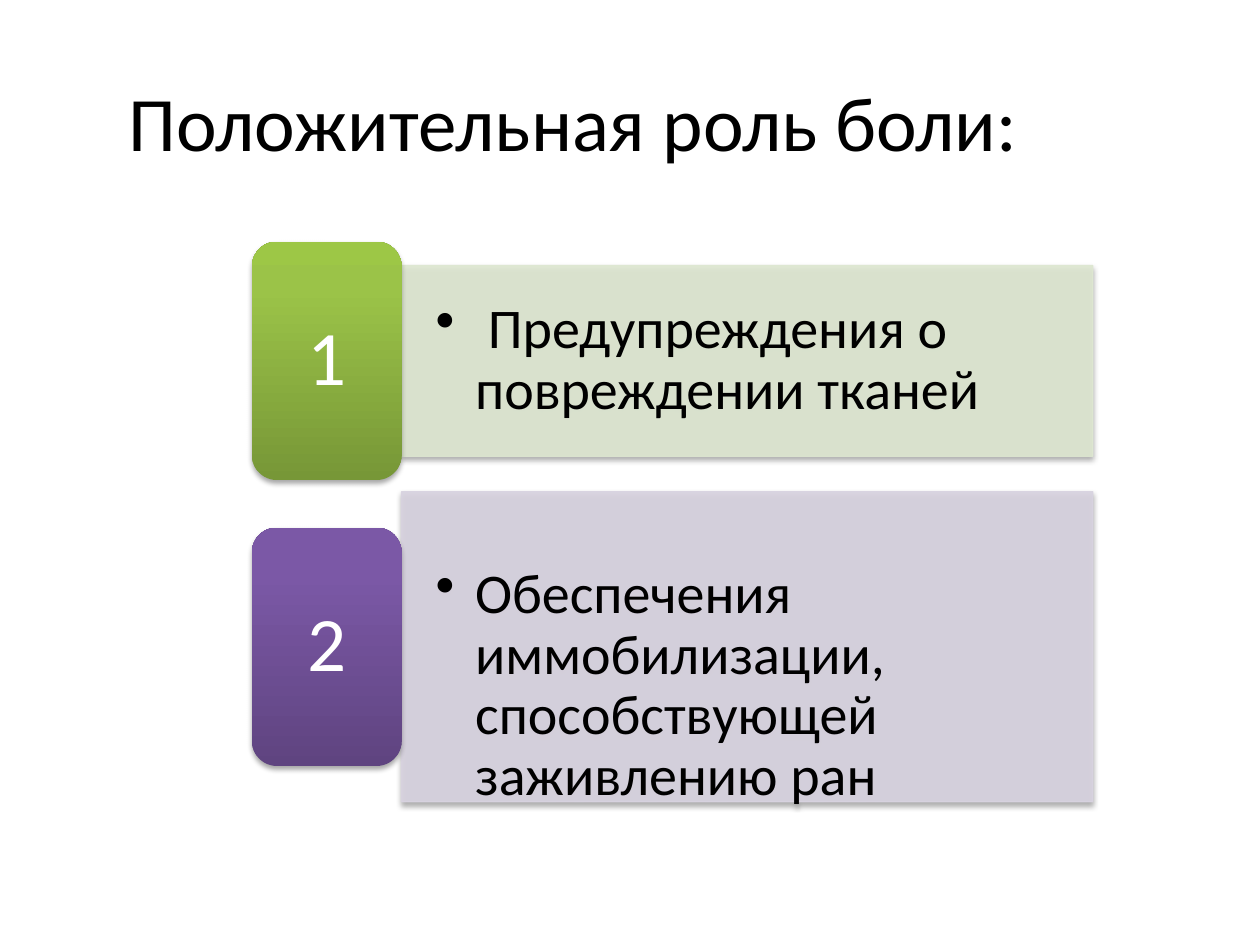
"""Builds a slide on the positive role of pain with two numbered panels."""
import pptx
import pptx.dml.color
import pptx.enum.shapes
import pptx.enum.text
import pptx.oxml
import pptx.oxml.ns
import pptx.util
from lxml import etree

Pt = pptx.util.Pt
RGB = pptx.dml.color.RGBColor.from_string
SHAPE = pptx.enum.shapes.MSO_SHAPE
ALIGN = pptx.enum.text.PP_ALIGN
ANCHOR = pptx.enum.text.MSO_ANCHOR
qn = pptx.oxml.ns.qn
NS = pptx.oxml.ns.nsdecls("a")

COLORS = {
    "text": "000000", "number": "FFFFFF",
    "panels": ["DEE7D1", "D8D3E0"],
    "badges": [("779737", "9BC348", "9DC746"), ("5F4480", "7B58A6", "7C57A8")],
}
ITEMS = [
    (" Предупреждения о повреждении тканей", 206.2, 109, ANCHOR.MIDDLE, 10),
    ("Обеспечения иммобилизации, способствующей заживлению ран", 369.6, 177.2, ANCHOR.TOP, 42),
]
BADGE_LEFT, BADGE_W, BADGE_H, PANEL_W = 144, 85.5, 136.2, 395


def add_block(kind, left, middle, width, height):
    sp = s.shapes.add_shape(kind, Pt(left), Pt(middle - height / 2), Pt(width), Pt(height))
    sp.shadow.inherit = False
    effects = sp._element.spPr.find(qn("a:effectLst"))
    effects.append(pptx.oxml.parse_xml(
        f'<a:outerShdw {NS} blurRad="{Pt(3.1)}" dist="{Pt(1.8)}" dir="5400000" rotWithShape="0">'
        '<a:srgbClr val="000000"><a:alpha val="35000"/></a:srgbClr></a:outerShdw>'))
    return sp


def set_text(tf, text, size, color, align):
    tf.text = text
    tf.word_wrap = True
    p = tf.paragraphs[0]
    p.alignment = align
    font = p.runs[0].font
    font.name, font.size = "Calibri", Pt(size)
    font.color.rgb = RGB(COLORS[color])
    return p


prs = pptx.Presentation()
prs.slide_width, prs.slide_height = Pt(720), Pt(540)
s = prs.slides.add_slide(prs.slide_layouts[5])

title = s.shapes.title
title.left, title.top, title.width, title.height = Pt(66.2), Pt(23.8), Pt(635.8), Pt(90)
title.text_frame.vertical_anchor = ANCHOR.MIDDLE
set_text(title.text_frame, "Положительная роль боли:", 44, "text", ALIGN.LEFT)

for i, (text, middle, height, anchor, top_inset) in enumerate(ITEMS):
    panel = add_block(SHAPE.RECTANGLE, BADGE_LEFT + BADGE_W, middle, PANEL_W, height)
    panel.fill.solid()
    panel.line.width = Pt(0.75)
    for color in (panel.fill.fore_color, panel.line.color):
        color.rgb = RGB(COLORS["panels"][i])
    for clr in panel._element.spPr.findall(".//" + qn("a:solidFill") + "/" + qn("a:srgbClr")):
        etree.SubElement(clr, qn("a:alpha"), val="90000")
    tf = panel.text_frame
    tf.vertical_anchor = anchor
    tf.margin_left = tf.margin_right = Pt(19.5)
    tf.margin_top, tf.margin_bottom = Pt(top_inset), Pt(10 if anchor == ANCHOR.MIDDLE else 0)
    p = set_text(tf, text, 32, "text", ALIGN.LEFT)
    p.line_spacing = 0.9
    pPr = p._p.get_or_add_pPr()
    pPr.set("marL", str(Pt(22.5)))
    pPr.set("indent", str(Pt(-22.5)))
    etree.SubElement(pPr, qn("a:buChar"), char="•")

    badge = add_block(SHAPE.ROUNDED_RECTANGLE, BADGE_LEFT, middle, BADGE_W, BADGE_H)
    badge.line.fill.background()
    stops = "".join(
        f'<a:gs pos="{pos}"><a:srgbClr val="{c}"/></a:gs>'
        for pos, c in zip((0, 80000, 100000), COLORS["badges"][i]))
    badge._element.spPr.find(qn("a:prstGeom")).addnext(pptx.oxml.parse_xml(
        f'<a:gradFill {NS} rotWithShape="1"><a:gsLst>{stops}</a:gsLst>'
        '<a:lin ang="16200000" scaled="0"/></a:gradFill>'))
    badge.text_frame.vertical_anchor = ANCHOR.MIDDLE
    set_text(badge.text_frame, str(i + 1), 44, "number", ALIGN.CENTER).line_spacing = 0.9

prs.save("out.pptx")
